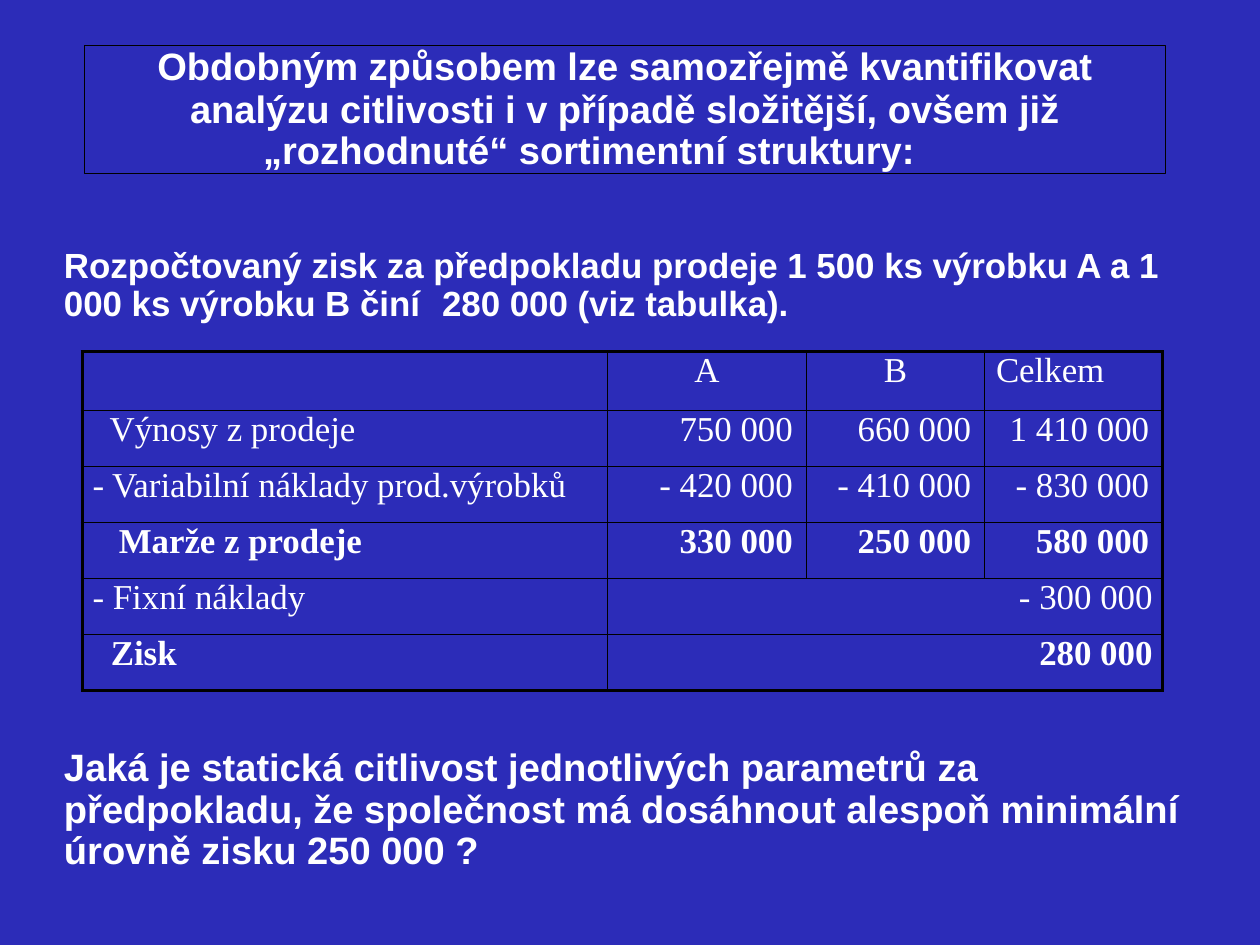
from lxml.etree import SubElement as Sub
from pptx import Presentation
from pptx.dml.color import RGBColor as Rgb
from pptx.enum.text import MSO_ANCHOR as Anchor, MSO_AUTO_SIZE as Auto, PP_ALIGN as Align
from pptx.oxml import parse_xml
from pptx.oxml.ns import nsdecls, qn
from pptx.util import Inches, Pt

WIDE, HIGH = Inches(11.03), Inches(8.27)
HUES = {"back": "2C2CB8", "text": "FFFFFF", "line": "000000"}
COLS = [41.7, 15.78, 14.14, 14.14]
ROWS = [6.17] + [5.93] * 5
TITLE = [
    ("Obdobným způsobem lze samozřejmě kvantifikovat analýzu citlivosti i v případě složitější, ovšem již", 26.8, 0.63),
    ("„rozhodnuté“ sortimentní struktury:", 26.2, 0),
]
PROFIT = "Rozpočtovaný zisk za předpokladu prodeje 1 500 ks výrobku A a 1 000 ks výrobku B činí\t280 000 (viz tabulka)."
QUERY = "Jaká je statická citlivost jednotlivých parametrů za předpokladu, že společnost má dosáhnout alespoň minimální úrovně zisku 250 000 ?"
HEADS = [("A", Align.CENTER, 0), ("B", Align.CENTER, 0), ("Celkem", Align.LEFT, 0.1)]
LINES = [
    ("Výnosy z prodeje", 0.24, False, ["750 000", "660 000", "1 410 000"]),
    ("- Variabilní náklady prod.výrobků", 0.09, False, ["- 420 000", "- 410 000", "- 830 000"]),
    ("Marže z prodeje", 0.32, True, ["330 000", "250 000", "580 000"]),
    ("- Fixní náklady", 0.09, False, ["- 300 000"]),
    ("Zisk", 0.25, True, ["280 000"]),
]


def hue(name):
    """Return a named colour."""
    return Rgb.from_string(HUES[name])


def across(share):
    """Turn a percentage of the slide width into a length."""
    return int(WIDE * share / 100)


def down(share):
    """Turn a percentage of the slide height into a length."""
    return int(HIGH * share / 100)


def area(x, y, w, h):
    """Turn percentages into left, top, width and height."""
    return across(x), down(y), across(w), down(h)


def style(para, size, face, bold=True, align=Align.LEFT):
    """Set the font and alignment of a paragraph."""
    para.alignment = align
    font = para.font
    font.size, font.name, font.bold = Pt(size), face, bold
    font.color.rgb = hue("text")


def clear(frame, right=0):
    """Drop the insets of a text frame and wrap it from the top."""
    frame.margin_left = frame.margin_top = frame.margin_bottom = 0
    frame.margin_right = Inches(right)
    frame.word_wrap = True
    frame.auto_size = Auto.NONE
    frame.vertical_anchor = Anchor.TOP


def add_title(slide):
    """Fill and frame the title."""
    title = slide.shapes.title
    title.left, title.top, title.width, title.height = area(6.71, 4.84, 85.77, 13.54)
    title.fill.solid()
    title.fill.fore_color.rgb = hue("back")
    title.line.color.rgb = hue("line")
    title.line.width = Pt(0.75)
    frame = title.text_frame
    clear(frame, 0.63)
    frame.text = "\n".join(text for text, _, _ in TITLE)
    for para, (_, gap, left) in zip(frame.paragraphs, TITLE):
        para.line_spacing = Pt(gap)
        para._p.get_or_add_pPr().set("marL", str(Inches(left)))
        style(para, 24, "Arial", align=Align.CENTER)


def add_body(slide, box, text, size, gap, tab=None):
    """Add a bold paragraph, with a tab stop if given."""
    frame = slide.shapes.add_textbox(*area(*box)).text_frame
    clear(frame)
    para = frame.paragraphs[0]
    para.text = text
    para.line_spacing = Pt(gap)
    if tab:
        stops = Sub(para._p.get_or_add_pPr(), qn("a:tabLst"))
        Sub(stops, qn("a:tab"), pos=str(Inches(tab)), algn="l")
    style(para, size, "Arial")


def put(cell, text, align, left=0, right=0, bold=False):
    """Write one table cell."""
    cell.margin_left, cell.margin_right = Inches(left), Inches(right)
    cell.margin_top = cell.margin_bottom = 0
    para = cell.text_frame.paragraphs[0]
    para.text = text
    style(para, 22, "Times New Roman", bold, align)


def edge(cell, row, col):
    """Fill a cell and rule its sides, heavier on the outside."""
    outer = {
        "L": col == 0,
        "R": col == len(COLS) - 1 or cell.is_merge_origin,
        "T": row == 0,
        "B": row == len(ROWS) - 1,
    }
    cell.fill.solid()
    cell.fill.fore_color.rgb = hue("back")
    props = cell._tc.get_or_add_tcPr()
    for spot, (side, thick) in enumerate(outer.items()):
        width = Pt(2.25 if thick else 1)
        props.insert(spot, parse_xml(
            f'<a:ln{side} {nsdecls("a")} w="{width}"><a:solidFill>'
            f'<a:srgbClr val="{HUES["line"]}"/></a:solidFill></a:ln{side}>'))


def add_grid(slide):
    """Add the profit table."""
    box = area(6.53, 37.24, sum(COLS), sum(ROWS))
    table = slide.shapes.add_table(len(ROWS), len(COLS), *box).table
    table.first_row = table.horz_banding = False
    for col, share in zip(table.columns, COLS):
        col.width = across(share)
    for row, share in zip(table.rows, ROWS):
        row.height = down(share)
    for col, (text, align, left) in enumerate(HEADS, 1):
        put(table.cell(0, col), text, align, left)
    for row, (label, left, bold, sums) in enumerate(LINES, 1):
        put(table.cell(row, 0), label, Align.LEFT, left, bold=bold)
        whole = len(sums) == 1
        if whole:
            table.cell(row, 1).merge(table.cell(row, len(COLS) - 1))
        for col, text in enumerate(sums, 1):
            put(table.cell(row, col), text, Align.RIGHT, right=0.09 if whole else 0.12, bold=bold)
    for row in range(len(ROWS)):
        for col in range(len(COLS)):
            edge(table.cell(row, col), row, col)


def main():
    """Build and save the slide."""
    deck = Presentation()
    deck.slide_width, deck.slide_height = WIDE, HIGH
    slide = deck.slides.add_slide(deck.slide_layouts[5])
    slide.background.fill.solid()
    slide.background.fill.fore_color.rgb = hue("back")
    add_title(slide)
    add_body(slide, (5.08, 26.24, 87.3, 8.1), PROFIT, 22, 23.8, 3.31)
    add_body(slide, (5.08, 79.2, 89, 13.18), QUERY, 24, 25.9)
    add_grid(slide)
    deck.save("out.pptx")


if __name__ == "__main__":
    main()
